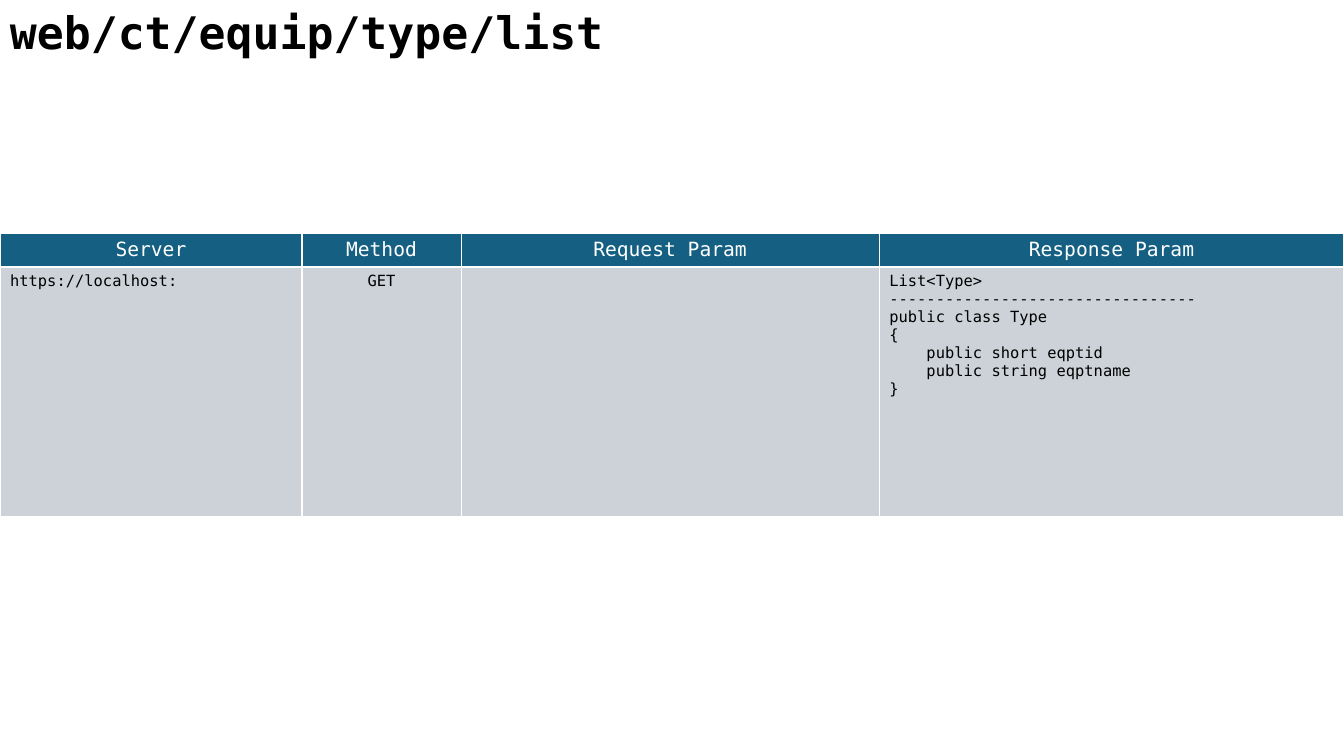
from dataclasses import dataclass

from pptx import Presentation
from pptx.dml.color import RGBColor as Rgb
from pptx.enum.text import MSO_AUTO_SIZE as Fit, PP_ALIGN as Align
from pptx.oxml import parse_xml
from pptx.oxml.ns import nsdecls
from pptx.util import Cm, Pt


@dataclass(frozen=True)
class Theme:
    font: str = "DejaVu Sans Mono"
    ink: str = "000000"
    white: str = "FFFFFF"
    head: str = "156082"
    body: str = "CCD2D8"
    title: int = 32
    label: int = 14
    code: int = 11
    edge: int = 1


def write(frame, text, *, font, size, color, bold=False, align=Align.LEFT):
    for i, line in enumerate(text.split("\n")):
        para = frame.add_paragraph() if i else frame.paragraphs[0]
        para.alignment = align
        para.font.size = Pt(size)
        if line:
            run = para.add_run()
            run.text = line
            run.font.name = font
            run.font.size = Pt(size)
            run.font.bold = bold
            run.font.color.rgb = Rgb.from_string(color)


class Page:
    def __init__(self, slide, theme):
        self.slide = slide
        self.theme = theme

    def title(self, text, left, top, width, height):
        box = self.slide.shapes.add_textbox(Cm(left), Cm(top), Cm(width), Cm(height))
        frame = box.text_frame
        frame.word_wrap = True
        frame.auto_size = Fit.SHAPE_TO_FIT_TEXT
        write(frame, text, font=self.theme.font, size=self.theme.title,
              color=self.theme.ink, bold=True)

    def border(self, cell):
        props = cell._tc.get_or_add_tcPr()
        for side in "LRTB":
            props.append(parse_xml(
                f'<a:ln{side} {nsdecls("a")} w="{Pt(self.theme.edge)}"><a:solidFill>'
                f'<a:srgbClr val="{self.theme.white}"/></a:solidFill></a:ln{side}>'))

    def cell(self, cell, text, fill, **style):
        self.border(cell)
        cell.fill.solid()
        cell.fill.fore_color.rgb = Rgb.from_string(fill)
        write(cell.text_frame, text, font=self.theme.font, **style)

    def table(self, left, top, widths, heights, heads, texts, aligns):
        look = self.theme
        grid = self.slide.shapes.add_table(
            len(heights), len(widths), Cm(left), Cm(top),
            Cm(sum(widths)), Cm(sum(heights))).table
        grid.horz_banding = False
        for row, height in zip(grid.rows, heights):
            row.height = Cm(height)
        for i, width in enumerate(widths):
            grid.columns[i].width = Cm(width)
            self.cell(grid.cell(0, i), heads[i], look.head, size=look.label,
                      color=look.white, align=Align.CENTER)
            self.cell(grid.cell(1, i), texts[i], look.body, size=look.code,
                      color=look.ink, align=aligns[i])


REPLY = """List<Type>
---------------------------------
public class Type
{
    public short eqptid
    public string eqptname
}"""


def main():
    deck = Presentation()
    deck.slide_width = Cm(33.87)
    deck.slide_height = Cm(19.05)
    page = Page(deck.slides.add_slide(deck.slide_layouts[6]), Theme())
    page.title("web/ct/equip/type/list", 0, 0, 24, 1.63)
    page.table(
        0, 5.88, (7.61, 4.01, 10.54, 11.71), (0.83, 6.3),
        ("Server", "Method", "Request Param", "Response Param"),
        ("https://localhost:", "GET", "", REPLY),
        (Align.LEFT, Align.CENTER, Align.LEFT, Align.LEFT))
    deck.save("out.pptx")


if __name__ == "__main__":
    main()
